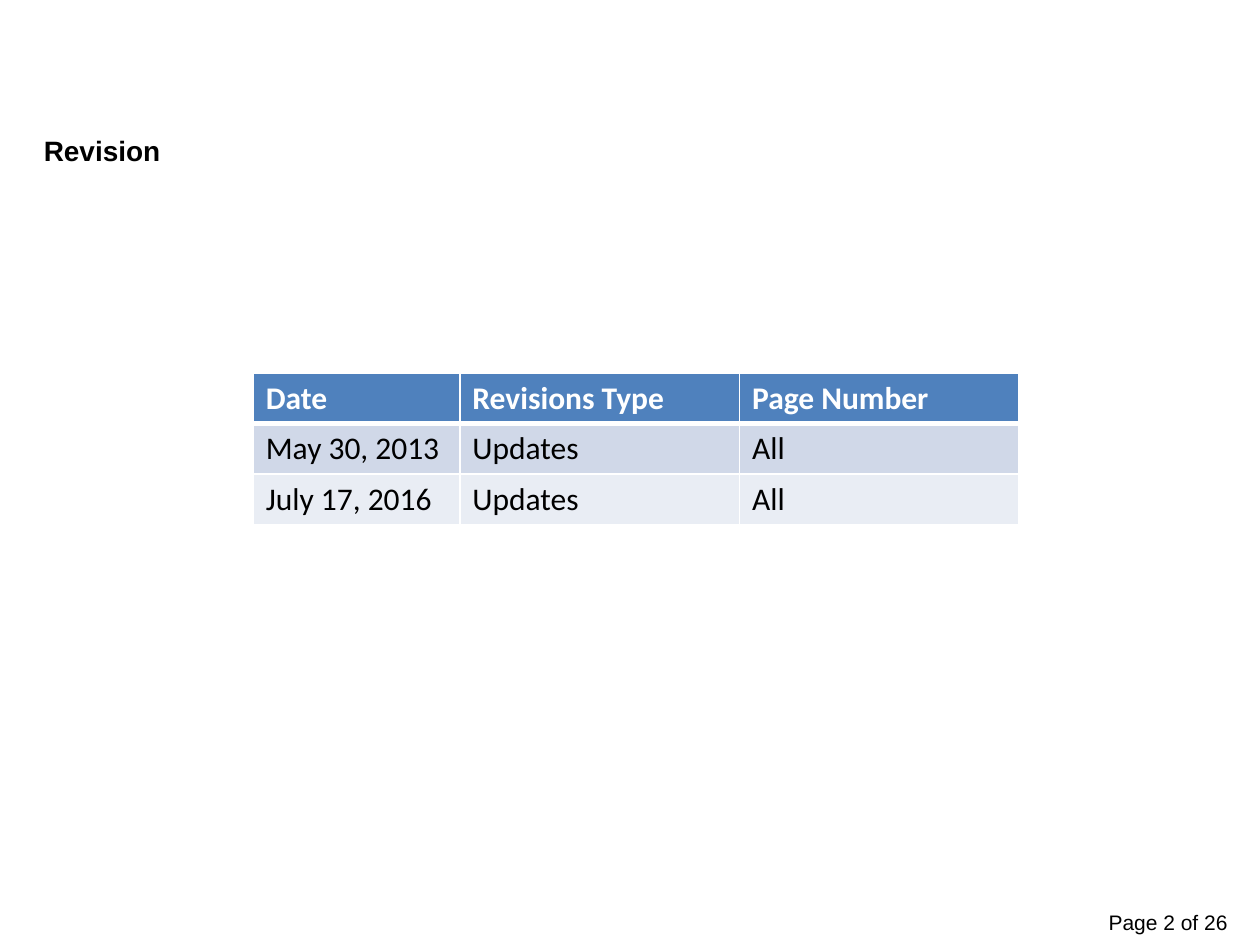
import pptx
import pptx.dml.color
import pptx.enum.text
import pptx.oxml.ns
import pptx.util
from lxml import etree

Inches = pptx.util.Inches
Anchor = pptx.enum.text.MSO_ANCHOR


def rgb(value):
    return pptx.dml.color.RGBColor.from_string(value)


class Deck:
    HEADER, BANDS = "4F81BD", ("D0D8E8", "E9EDF4")
    BLACK, WHITE = "000000", "FFFFFF"
    TITLE = {"name": "Arial", "size": pptx.util.Pt(16), "bold": True}
    FOOTER = {"name": "Arial", "size": pptx.util.Pt(12)}
    HEAD_CELL = {"name": "Calibri", "size": pptx.util.Pt(18), "bold": True}
    BODY_CELL = {**HEAD_CELL, "bold": False}

    def __init__(self, width, height):
        self.prs = pptx.Presentation()
        self.prs.slide_width, self.prs.slide_height = Inches(width), Inches(height)
        self.s = self.prs.slides.add_slide(self.prs.slide_layouts[6])

    def add_run(self, tf, text, style, color):
        """Put one styled run in a text frame."""
        r = tf.paragraphs[0].add_run()
        r.text = text
        for name, value in style.items():
            setattr(r.font, name, value)
        r.font.color.rgb = rgb(color)

    def text(self, box, text, style, anchor=Anchor.TOP):
        tf = self.s.shapes.add_textbox(*map(Inches, box)).text_frame
        tf.word_wrap = True
        tf.vertical_anchor = anchor
        self.add_run(tf, text, style, self.BLACK)

    def border(self, cell, side, points):
        """Draw one white cell edge; side is L, R, T or B."""
        ln = etree.SubElement(cell._tc.get_or_add_tcPr(),
                              pptx.oxml.ns.qn(f"a:ln{side}"), w=str(pptx.util.Pt(points)))
        fill = etree.SubElement(ln, pptx.oxml.ns.qn("a:solidFill"))
        etree.SubElement(fill, pptx.oxml.ns.qn("a:srgbClr"), val=self.WHITE)

    def table(self, left, top, widths, row_height, rows):
        frame = self.s.shapes.add_table(
            len(rows), len(widths), Inches(left), Inches(top),
            Inches(sum(widths)), Inches(row_height * len(rows)))
        table = frame.table
        for column, width in zip(table.columns, widths):
            column.width = Inches(width)
        for i, row in enumerate(rows):
            header = i == 0
            style = self.HEAD_CELL if header else self.BODY_CELL
            color = self.WHITE if header else self.BLACK
            fill = self.HEADER if header else self.BANDS[(i - 1) % 2]
            for j, text in enumerate(row):
                cell = table.cell(i, j)
                self.add_run(cell.text_frame, text, style, color)
                for side in "LRTB":
                    thick = (header and side == "B") or (i == 1 and side == "T")
                    self.border(cell, side, 3 if thick else 1)
                cell.fill.solid()
                cell.fill.fore_color.rgb = rgb(fill)


def main():
    deck = Deck(10, 7.5)
    deck.text((8.7, 7.17, 1.3, 0.3), "Page 2 of 26", deck.FOOTER)
    deck.table(2.01, 2.96, (1.64, 2.22, 2.22), 0.4, [
        ("Date", "Revisions Type", "Page Number"),
        ("May 30, 2013", "Updates", "All"),
        ("July 17, 2016", "Updates", "All"),
    ])
    deck.text((0.25, 0.84, 9, 0.71), "Revision", deck.TITLE, Anchor.MIDDLE)
    deck.prs.save("out.pptx")


if __name__ == "__main__":
    main()
